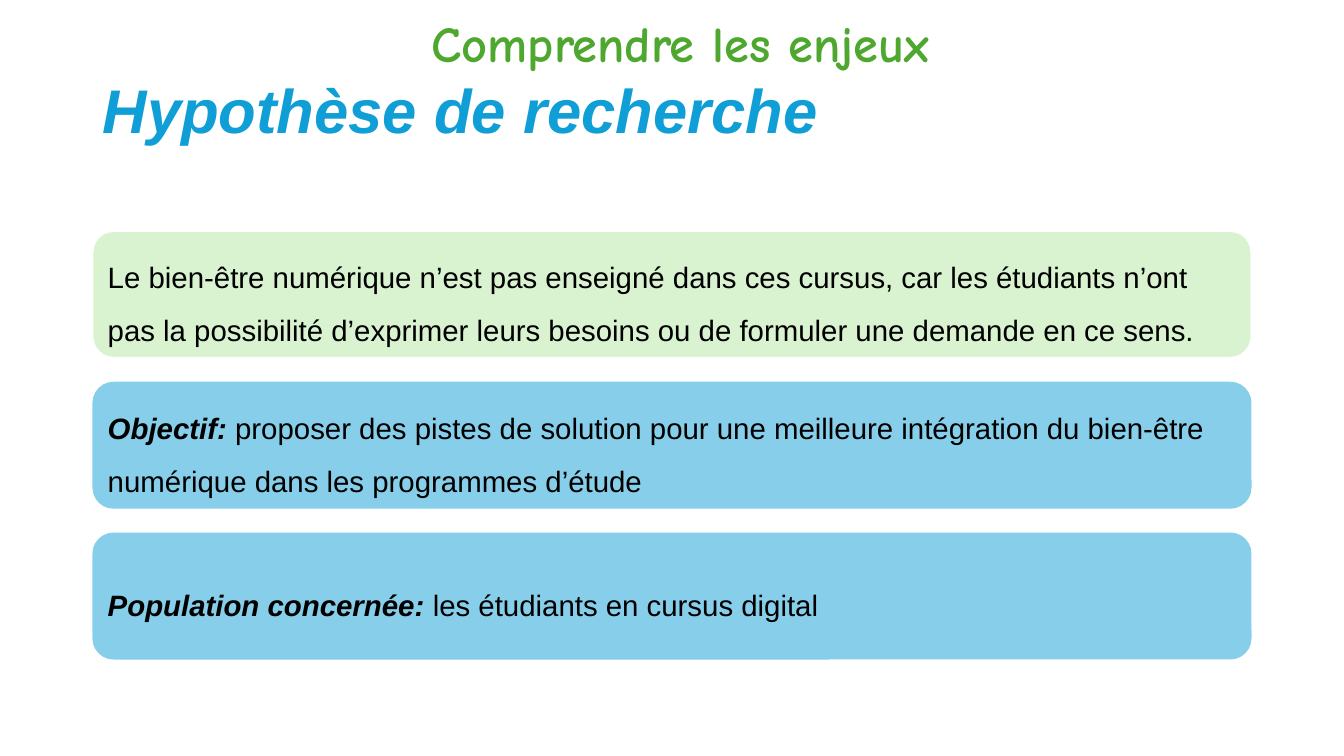
from dataclasses import dataclass

from lxml.etree import SubElement
from pptx import Presentation
from pptx.dml.color import RGBColor as RGB
from pptx.enum.shapes import MSO_SHAPE as Shape
from pptx.enum.text import MSO_ANCHOR as Anchor, PP_ALIGN as Align
from pptx.oxml.ns import qn
from pptx.util import Cm, Pt


@dataclass(frozen=True)
class Theme:
    blue: str = "0F9ED5"
    green: str = "4EA72E"
    pale: str = "D9F2D0"
    white: str = "FFFFFF"
    black: str = "000000"
    sans: str = "Arial"
    comic: str = "Comic Neue"
    title: int = 44
    head: int = 36
    body: int = 21


def write(para, text, font, size, color, bold=False, italic=False):
    run = para.add_run()
    run.text = text
    style = run.font
    style.name, style.size = font, Pt(size)
    style.bold, style.italic = bold, italic
    style.color.rgb = RGB.from_string(color)


class Deck:
    def __init__(self, theme):
        self.theme = theme
        self.prs = Presentation()
        self.prs.slide_width, self.prs.slide_height = Cm(33.87), Cm(19.05)
        self.slide = self.prs.slides.add_slide(self.prs.slide_layouts[5])

    def title(self, text, left, top, width, height):
        box = self.slide.shapes.title
        box.left, box.top = Cm(left), Cm(top)
        box.width, box.height = Cm(width), Cm(height)
        frame = box.text_frame
        frame.vertical_anchor = Anchor.MIDDLE
        para = frame.paragraphs[0]
        para.alignment, para.line_spacing = Align.LEFT, 0.9
        write(para, text, self.theme.sans, self.theme.title,
              self.theme.blue, bold=True, italic=True)

    def head(self, text, left, top, width, height):
        box = self.slide.shapes.add_textbox(
            Cm(left), Cm(top), Cm(width), Cm(height))
        box.text_frame.word_wrap = True
        write(box.text_frame.paragraphs[0], text, self.theme.comic,
              self.theme.head, self.theme.green, bold=True)

    def card(self, label, text, left, top, width, height, fill,
             alpha=None, edge=None):
        """Add a rounded panel; alpha is the fill's opacity in percent."""
        box = self.slide.shapes.add_shape(
            Shape.ROUNDED_RECTANGLE, Cm(left), Cm(top), Cm(width), Cm(height))
        box.shadow.inherit = False
        box.fill.solid()
        box.fill.fore_color.rgb = RGB.from_string(fill)
        if alpha:
            tint = box.fill._xPr.find(qn("a:solidFill"))[0]
            SubElement(tint, qn("a:alpha"), val=str(alpha * 1000))
        if edge:
            box.line.color.rgb = RGB.from_string(edge)
            box.line.width = Pt(1.5)
        else:
            box.line.fill.background()
        frame = box.text_frame
        frame.word_wrap = True
        frame.vertical_anchor = Anchor.MIDDLE
        frame.margin_left = frame.margin_right = Cm(0.23)
        frame.margin_top = frame.margin_bottom = Cm(0.23)
        para = frame.paragraphs[0]
        para.alignment, para.line_spacing = Align.LEFT, 1.5
        base = (self.theme.sans, self.theme.body, self.theme.black)
        if label:
            write(para, label + " ", *base, bold=True, italic=True)
        write(para, text, *base)


def main():
    theme = Theme()
    deck = Deck(theme)
    left, width = 2.33, 29.21
    deck.title("Hypothèse de recherche", left, 1.01, width, 3.68)
    soft = dict(fill=theme.blue, alpha=50)
    cards = [
        ("", "Le bien-être numérique n’est pas enseigné dans ces cursus, "
         "car les étudiants n’ont pas la possibilité d’exprimer leurs "
         "besoins ou de formuler une demande en ce sens.",
         dict(fill=theme.pale, edge=theme.white)),
        ("Objectif:", "proposer des pistes de solution pour une meilleure "
         "intégration du bien-être numérique dans les programmes d’étude",
         soft),
        ("Population concernée:", "les étudiants en cursus digital", soft),
    ]
    first, pitch, height = 5.82, 3.8, 3.2
    for row, (label, text, look) in enumerate(cards):
        deck.card(label, text, left, first + row * pitch, width, height, **look)
    deck.head("Comprendre les enjeux", 10.62, 0.18, 14.45, 1.8)
    deck.prs.save("out.pptx")


if __name__ == "__main__":
    main()
